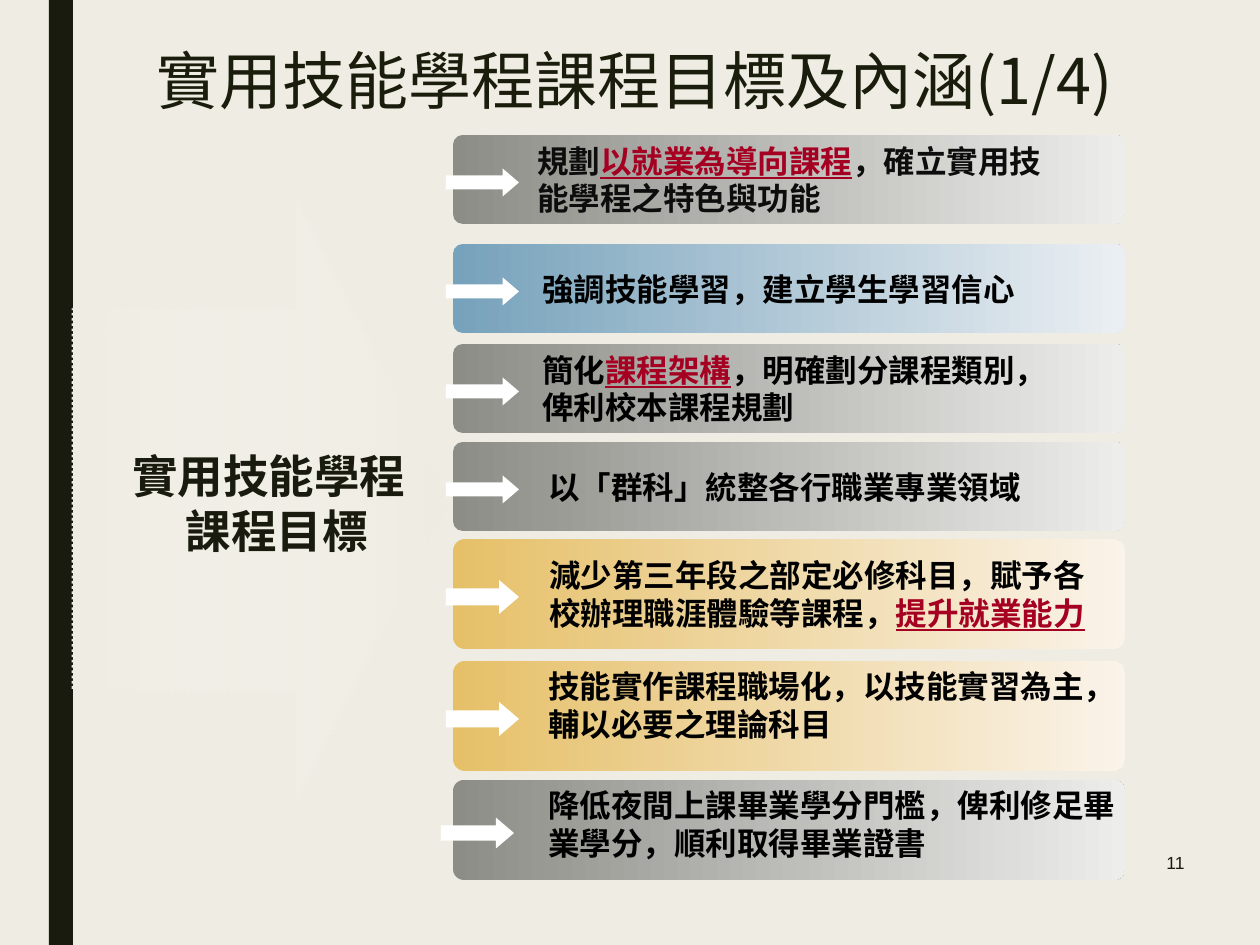
from lxml import etree
from pptx import Presentation
from pptx.dml.color import RGBColor
from pptx.enum.dml import MSO_LINE
from pptx.enum.shapes import MSO_SHAPE
from pptx.enum.text import MSO_ANCHOR, MSO_AUTO_SIZE, PP_ALIGN
from pptx.oxml.ns import qn
from pptx.util import Pt

RECTANGLE, ROUNDED = MSO_SHAPE.RECTANGLE, MSO_SHAPE.ROUNDED_RECTANGLE
ARROW = MSO_SHAPE.RIGHT_ARROW
LEFT, CENTER, RIGHT = PP_ALIGN.LEFT, PP_ALIGN.CENTER, PP_ALIGN.RIGHT
TOP, MIDDLE = MSO_ANCHOR.TOP, MSO_ANCHOR.MIDDLE
DOTTED = MSO_LINE.ROUND_DOT
NO_AUTOFIT = MSO_AUTO_SIZE.NONE

EMU_PER_PX = 914400 / 126
CJK, KARLA = "Noto Sans CJK SC", "Karla"
BACKGROUND, DARK, WHITE, BLACK, RED = "EFEDE3", "191B0E", "FFFFFF", "000000", "A50021"
GRAY, BLUE, GOLD = ("8C8D86", "EDEDEC"), ("77A2BB", "EBEFF3"), ("E6C069", "FAF3E9")

TITLE = "實用技能學程課程目標及內涵(1/4)"
HEADING = "實用技能學程課程目標"
PAGE_NUMBER = "11"

BAR_LEFT, BAR_WIDTH = 453, 672
ARROW_WIDTH, ARROW_DROP, ARROW_SHARE = 73, 3, 0.31
TEXT_HEIGHTS = {1: 50, 2: 88}

# Runs are (text, colour); red runs are underlined.
GOALS = [
    dict(top=135, height=89, colors=GRAY, text_left=525, text_width=556, lines=2,
         runs=[("規劃", "0D0D0D"), ("以就業為導向課程", RED),
               ("，確立實用技能學程之特色與功能", "0D0D0D")]),
    dict(top=244, height=89, colors=BLUE, text_left=530, text_width=556, lines=1,
         runs=[("強調技能學習，建立學生學習信心", BLACK)]),
    dict(top=344, height=89, colors=GRAY, text_left=530, text_width=556, lines=2,
         runs=[("簡化", BLACK), ("課程架構", RED),
               ("，明確劃分課程類別，俾利校本課程規劃", BLACK)]),
    dict(top=442, height=89, colors=GRAY, text_left=536, text_width=556, lines=1,
         runs=[("以「群科」統整各行職業專業領域", BLACK)]),
    dict(top=539, height=110, colors=GOLD, text_left=537, text_width=566, lines=2,
         runs=[("減少第三年段之部定必修科目，賦予各校辦理職涯體驗等課程，", BLACK),
               ("提升就業能力", RED)]),
    dict(top=661, height=110, colors=GOLD, text_left=536, text_width=566, lines=2,
         text_at_top=True, font=KARLA,
         runs=[("技能實作課程職場化，以技能實習為主，輔以必要之理論科目", BLACK)]),
    dict(top=780, height=100, colors=GRAY, text_left=536, text_width=605, lines=2,
         text_at_top=True, font=KARLA, arrow_left=441,
         runs=[("降低夜間上課畢業學分門檻，俾利修足畢業學分，順利取得畢業證書", BLACK)]),
]


def px(*lengths):
    return [round(length * EMU_PER_PX) for length in lengths]


def color(value):
    return RGBColor.from_string(value)


def fill_gradient(shape, colors, alphas=()):
    """Fill from left to right; alphas are opacities in percent."""
    shape.fill.gradient()
    shape.fill.gradient_angle = 0
    for stop, value in zip(shape.fill.gradient_stops, colors):
        stop.color.rgb = color(value)
    for element, alpha in zip(shape.fill._xPr.iter(qn("a:srgbClr")), alphas):
        etree.SubElement(element, qn("a:alpha"), val=str(alpha * 1000))


def add_shape(shapes, kind, box, fill=None, adjustments=()):
    shape = shapes.add_shape(kind, *px(*box))
    shape.shadow.inherit = False
    shape.line.fill.background()
    for index, value in enumerate(adjustments):
        shape.adjustments[index] = value
    if fill:
        shape.fill.solid()
        shape.fill.fore_color.rgb = color(fill)
    return shape


def write(shape, runs, size, font=CJK, bold=False, align=LEFT, anchor=TOP):
    frame = shape.text_frame
    for name, value in dict(word_wrap=True, auto_size=NO_AUTOFIT,
                            vertical_anchor=anchor).items():
        setattr(frame, name, value)
    paragraph = frame.paragraphs[0]
    paragraph.alignment = align
    for text, value in runs:
        run = paragraph.add_run()
        run.text = text
        formats = dict(name=font, size=Pt(size), bold=bold, underline=value == RED)
        for name, setting in formats.items():
            setattr(run.font, name, setting)
        run.font.color.rgb = color(value)
        east_asian = etree.Element(qn("a:ea"), typeface=CJK)
        run.font._element.find(qn("a:latin")).addnext(east_asian)
    return paragraph


def add_text(slide, box, *args, **formats):
    return write(slide.shapes.add_textbox(*px(*box)), *args, **formats)


def add_title(slide):
    title = slide.shapes.title
    title.left, title.top, title.width, title.height = px(144, 16, 1116, 127)
    paragraph = write(title, [(TITLE, "1A1D0C")], 36, anchor=MIDDLE)
    effects = etree.Element(qn("a:effectLst"))
    shadow = etree.SubElement(effects, qn("a:outerShdw"), dist="38100", dir="2700000")
    etree.SubElement(shadow, qn("a:srgbClr"), val=WHITE)
    paragraph.runs[0].font._element.find(qn("a:solidFill")).addnext(effects)


def add_goal(slide, goal):
    top, height = goal["top"], goal["height"]
    group = slide.shapes.add_group_shape()
    bar = add_shape(group.shapes, ROUNDED, (BAR_LEFT, top, BAR_WIDTH, height),
                    adjustments=[0.109])
    fill_gradient(bar, goal["colors"])
    arrow_height = round(height * ARROW_SHARE)
    arrow_top = top + (height - arrow_height) / 2 + ARROW_DROP
    add_shape(group.shapes, ARROW,
              (goal.get("arrow_left", 446), arrow_top, ARROW_WIDTH, arrow_height),
              WHITE, [0.5, 0.583])
    text_height = TEXT_HEIGHTS[goal["lines"]]
    text_top = top if goal.get("text_at_top") else top + (height - text_height) / 2
    add_text(slide, (goal["text_left"], text_top, goal["text_width"], text_height),
             goal["runs"], 18, font=goal.get("font", CJK), bold=True)


def main():
    presentation = Presentation()
    presentation.slide_width, presentation.slide_height = px(1260, 945)
    slide = presentation.slides.add_slide(presentation.slide_layouts[5])
    slide.background.fill.solid()
    slide.background.fill.fore_color.rgb = color(BACKGROUND)

    add_shape(slide.shapes, RECTANGLE, (49, 0, 24, 945), DARK)
    add_title(slide)
    add_text(slide, (903, 830, 294, 66), [(PAGE_NUMBER, DARK)], 10,
             font="Arial", align=RIGHT, anchor=MIDDLE)

    big_arrow = add_shape(slide.shapes, ARROW, (73, 195, 378, 609),
                          adjustments=[0.628, 0.413])
    fill_gradient(big_arrow, (WHITE, BACKGROUND), (0, 50))
    big_arrow.line.color.rgb = color(BACKGROUND)
    big_arrow.line.width = Pt(1.5)
    big_arrow.line.dash_style = DOTTED

    heading = add_text(slide, (105, 442, 328, 122), [(HEADING, DARK)], 26,
                       bold=True, align=CENTER)
    indent = px(16)[0]
    properties = heading._p.get_or_add_pPr()
    properties.set("marL", str(indent))
    properties.set("indent", str(-indent))

    for goal in GOALS:
        add_goal(slide, goal)
    presentation.save("out.pptx")


if __name__ == "__main__":
    main()
